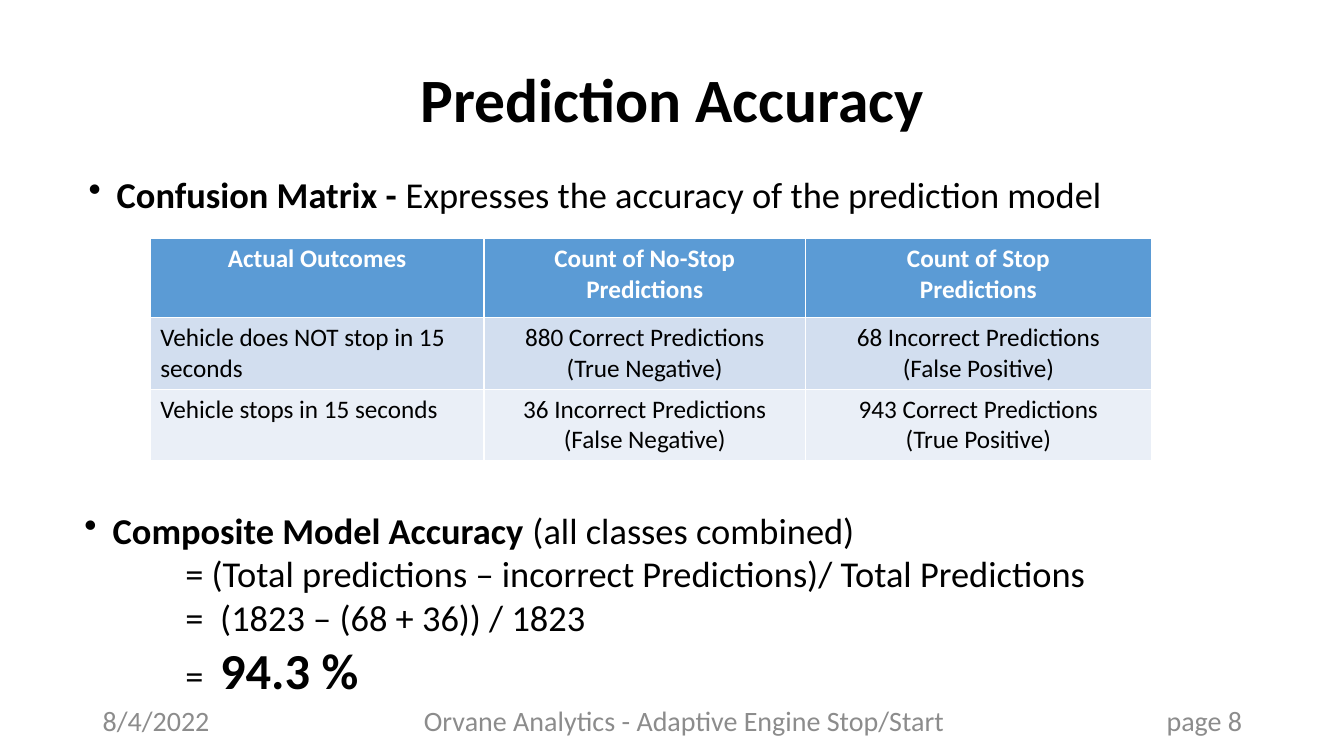
"""Build a slide on prediction accuracy with a confusion matrix."""
from dataclasses import dataclass

import pptx
import pptx.dml.color
import pptx.enum.text
import pptx.oxml
import pptx.oxml.ns
import pptx.util

ALIGN = pptx.enum.text.PP_ALIGN
ANCHOR = pptx.enum.text.MSO_ANCHOR
WIDE, HIGH = 13.33, 7.5


@dataclass(frozen=True)
class Theme:
    font: str = "Calibri"
    ink: str = "000000"
    pale: str = "FFFFFF"
    grey: str = "8C8C8C"
    head: str = "5B9BD5"
    bands: tuple[str, ...] = ("D2DEEF", "EAEFF7")
    title: int = 44
    body: int = 26
    big: int = 36
    cell: int = 18
    foot: int = 20


THEME = Theme()


@dataclass(frozen=True)
class Area:
    """Hold a place as percentages of the slide's width and height."""
    left: float
    top: float
    width: float
    height: float

    def box(self) -> tuple[int, int, int, int]:
        return across(self.left), down(self.top), across(self.width), down(self.height)


@dataclass(frozen=True)
class Run:
    text: str
    bold: bool = False
    size: int = THEME.body
    color: str = THEME.ink


@dataclass(frozen=True)
class Para:
    runs: tuple[Run, ...]
    align: ALIGN = ALIGN.LEFT
    margin: float = 0
    hang: float = 0
    bullet: bool = False


@dataclass(frozen=True)
class Block:
    area: Area
    paras: tuple[Para, ...]
    anchor: ANCHOR = ANCHOR.TOP


def across(share: float) -> int:
    return pptx.util.Inches(WIDE * share / 100)


def down(share: float) -> int:
    return pptx.util.Inches(HIGH * share / 100)


def tint(code: str) -> pptx.dml.color.RGBColor:
    return pptx.dml.color.RGBColor.from_string(code)


def write(frame, paras: tuple[Para, ...]) -> None:
    """Fill a text frame run by run."""
    frame.word_wrap = True
    for spot, para in enumerate(paras):
        line = frame.add_paragraph() if spot else frame.paragraphs[0]
        line.alignment = para.align
        if para.margin:
            props = line._p.get_or_add_pPr()
            props.set("marL", str(across(para.margin)))
            props.set("indent", str(-across(para.hang)))
            if para.bullet:
                mark = pptx.oxml.parse_xml(
                    f'<a:buChar {pptx.oxml.ns.nsdecls("a")} char="•"/>')
                props.append(mark)
        for part in para.runs:
            run = line.add_run()
            run.text = part.text
            run.font.name = THEME.font
            run.font.size = pptx.util.Pt(part.size)
            run.font.bold = part.bold
            run.font.color.rgb = tint(part.color)


def draw(slide, block: Block) -> None:
    frame = slide.shapes.add_textbox(*block.area.box()).text_frame
    frame.vertical_anchor = block.anchor
    write(frame, block.paras)


def point(*runs: Run) -> Para:
    return Para(runs, margin=2.1, hang=2.1, bullet=True)


def step(*runs: Run) -> Para:
    return Para(runs, margin=10.1, hang=2.6)


def foot(left: float, width: float, text: str, align: ALIGN) -> Block:
    line = Para((Run(text, size=THEME.foot, color=THEME.grey),), align)
    return Block(Area(left, 92.67, width, 5.33), (line,), ANCHOR.MIDDLE)


MATRIX = (
    (("Actual Outcomes",), ("Count of No-Stop Predictions",),
     ("Count of Stop", "Predictions")),
    (("Vehicle does NOT stop in 15 seconds",),
     ("880 Correct Predictions", "(True Negative)"),
     ("68 Incorrect Predictions", "(False Positive)")),
    (("Vehicle stops in 15 seconds",),
     ("36 Incorrect Predictions", "(False Negative)"),
     ("943 Correct Predictions", "(True Positive)")),
)
COLS = (24.83, 23.93, 25.73)
ROWS = (10.4, 9.4, 9.4)
GRID = Area(11.18, 31.6, sum(COLS), sum(ROWS))

BLOCKS = (
    Block(Area(5.85, 22.13, 79.22, 7.2), (
        point(Run("Confusion Matrix - ", True),
              Run("Expresses the accuracy of the prediction model")),)),
    Block(Area(5.55, 66.53, 79.97, 26.93), (
        point(Run("Composite Model Accuracy ", True),
              Run("(all classes combined)")),
        Para((Run("= (Total predictions – incorrect Predictions)/ Total Predictions"),),
             margin=7.5),
        step(Run("=\t(1823 – (68 + 36)) / 1823")),
        step(Run("=\t"), Run("94.3 %", True, THEME.big)))),
    foot(70.67, 22.5, "page 8", ALIGN.RIGHT),
    foot(6.9, 22.5, "8/4/2022", ALIGN.LEFT),
    foot(27.83, 46.14, "Orvane Analytics - Adaptive Engine Stop/Start", ALIGN.CENTER),
)


def tabulate(slide) -> None:
    """Draw the confusion matrix."""
    table = slide.shapes.add_table(len(ROWS), len(COLS), *GRID.box()).table
    for col, share in zip(table.columns, COLS):
        col.width = across(share)
    for row, share in zip(table.rows, ROWS):
        row.height = down(share)
    fills = (THEME.head, *THEME.bands)
    for y, entries in enumerate(MATRIX):
        for x, lines in enumerate(entries):
            cell = table.cell(y, x)
            cell.fill.solid()
            cell.fill.fore_color.rgb = tint(fills[y])
            top = y == 0
            color = THEME.pale if top else THEME.ink
            align = ALIGN.CENTER if top or x else ALIGN.LEFT
            write(cell.text_frame, tuple(
                Para((Run(text, top, THEME.cell, color),), align) for text in lines))


def main() -> None:
    deck = pptx.Presentation()
    deck.slide_width, deck.slide_height = across(100), down(100)
    slide = deck.slides.add_slide(deck.slide_layouts[5])
    title = slide.shapes.title
    title.left, title.top, title.width, title.height = Area(6.9, 5.33, 86.27, 16.4).box()
    title.text_frame.vertical_anchor = ANCHOR.MIDDLE
    write(title.text_frame, (
        Para((Run("Prediction Accuracy", True, THEME.title),), ALIGN.CENTER),))
    title.text_frame.paragraphs[0].line_spacing = 0.9
    tabulate(slide)
    for block in BLOCKS:
        draw(slide, block)
    deck.save("out.pptx")


if __name__ == "__main__":
    main()
